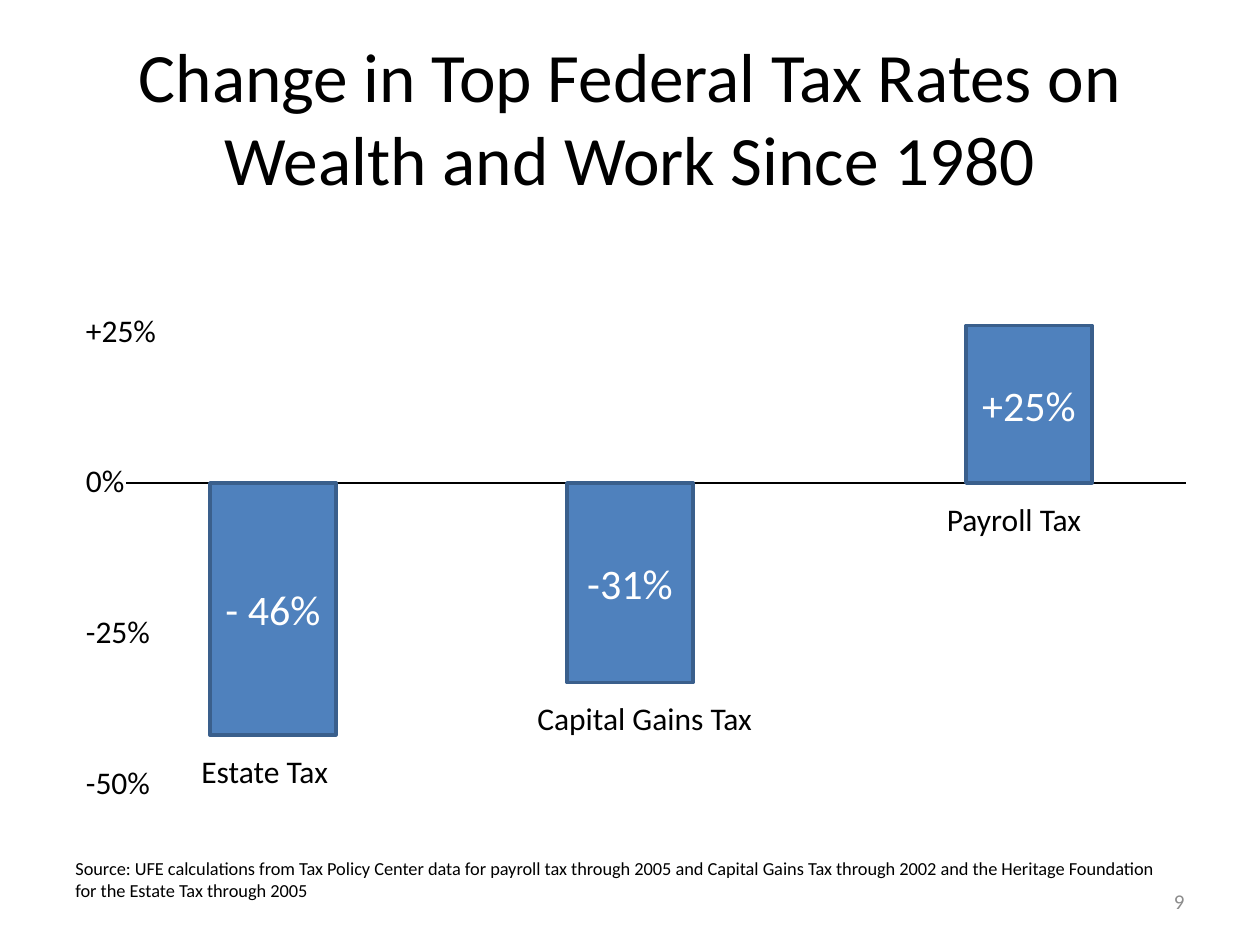
from pptx import Presentation
from pptx.dml.color import RGBColor
from pptx.enum.shapes import MSO_CONNECTOR, MSO_SHAPE
from pptx.enum.text import MSO_ANCHOR, MSO_AUTO_SIZE, PP_ALIGN
from pptx.oxml.ns import qn
from pptx.util import Inches, Pt
from lxml.etree import SubElement

COLORS = {"text": "000000", "bar": "4F81BD", "edge": "3A5F8C",
          "value": "FFFFFF", "number": "8C8C8C", "page": "FFFFFF"}
COLUMNS, ROWS = 120, 90  # grid of twelfths of an inch
ZERO_ROW = 46
BAR_WIDTH = 12

deck = Presentation()
deck.slide_width, deck.slide_height = Inches(10), Inches(7.5)
page = deck.slides.add_slide(deck.slide_layouts[5])


def place(column, row, width, height):
    across, down = deck.slide_width / COLUMNS, deck.slide_height / ROWS
    return [round(column * across), round(row * down),
            round(width * across), round(height * down)]


def write(box, lines, size, color="text", align=PP_ALIGN.LEFT,
          anchor=MSO_ANCHOR.TOP, gap=0):
    frame = box.text_frame
    settings = {"word_wrap": True, "auto_size": MSO_AUTO_SIZE.NONE,
                "vertical_anchor": anchor}
    for name, value in settings.items():
        setattr(frame, name, value)
    for index, line in enumerate(lines):
        para = frame.add_paragraph() if index else frame.paragraphs[0]
        para.alignment = align
        para.space_before = Pt(gap if index else 0)
        span = para.add_run()
        span.text = line
        for name, value in {"name": "Calibri", "size": Pt(size)}.items():
            setattr(span.font, name, value)
        span.font.color.rgb = RGBColor.from_string(COLORS[color])


# Title
title = page.shapes.title
title.left, title.top, title.width, title.height = place(6, 3.6, 108, 15)
title.fill.solid()
title.fill.fore_color.rgb = RGBColor.from_string(COLORS["page"])
write(title, ["Change in Top Federal Tax Rates on Wealth and Work Since 1980"],
      39.6, align=PP_ALIGN.CENTER, anchor=MSO_ANCHOR.MIDDLE)

# Scale labels, evenly spaced
scale = page.shapes.add_textbox(*place(7, 29, 14, 48.5))
write(scale, ["+25%", "0%", "-25%", "-50%"], 18, gap=64.5)

# Zero line
left, top, width, _ = place(12, ZERO_ROW, 101, 0)
axis = page.shapes.add_connector(MSO_CONNECTOR.STRAIGHT, left, top, left + width, top)
axis.line.color.rgb = RGBColor.from_string(COLORS["text"])
axis.line.width = Pt(1.5)
SubElement(axis.element.spPr, qn("a:effectLst"))

# Bars: value, tax, column, rows below zero, label column, label width
bars = [
    ("- 46%", "Estate Tax", 20, 24, 18, 19),
    ("-31%", "Capital Gains Tax", 54, 19, 50, 24),
    ("+25%", "Payroll Tax", 92, -15, 89, 22),
]
for value, tax, column, drop, label_column, label_width in bars:
    top_row = ZERO_ROW + min(drop, 0)
    bar = page.shapes.add_shape(
        MSO_SHAPE.RECTANGLE, *place(column, top_row, BAR_WIDTH, abs(drop)))
    bar.shadow.inherit = False
    bar.fill.solid()
    bar.fill.fore_color.rgb = RGBColor.from_string(COLORS["bar"])
    bar.line.color.rgb = RGBColor.from_string(COLORS["edge"])
    bar.line.width = Pt(2)
    write(bar, [value], 24, "value", PP_ALIGN.CENTER, MSO_ANCHOR.MIDDLE)

    label_row = ZERO_ROW + max(drop, 0) + 1
    label = page.shapes.add_textbox(*place(label_column, label_row, label_width, 4.8))
    write(label, [tax], 18)

# Source note and page number
source = page.shapes.add_textbox(*place(6, 81, 106, 5.4))
write(source, ["Source: UFE calculations from Tax Policy Center data for payroll tax "
               "through 2005 and Capital Gains Tax through 2002 and the Heritage "
               "Foundation for the Estate Tax through 2005"], 10.5)
number = page.shapes.add_textbox(*place(86, 83.4, 28, 4.8))
write(number, ["9"], 12, "number", PP_ALIGN.RIGHT, MSO_ANCHOR.MIDDLE)

deck.save("out.pptx")
